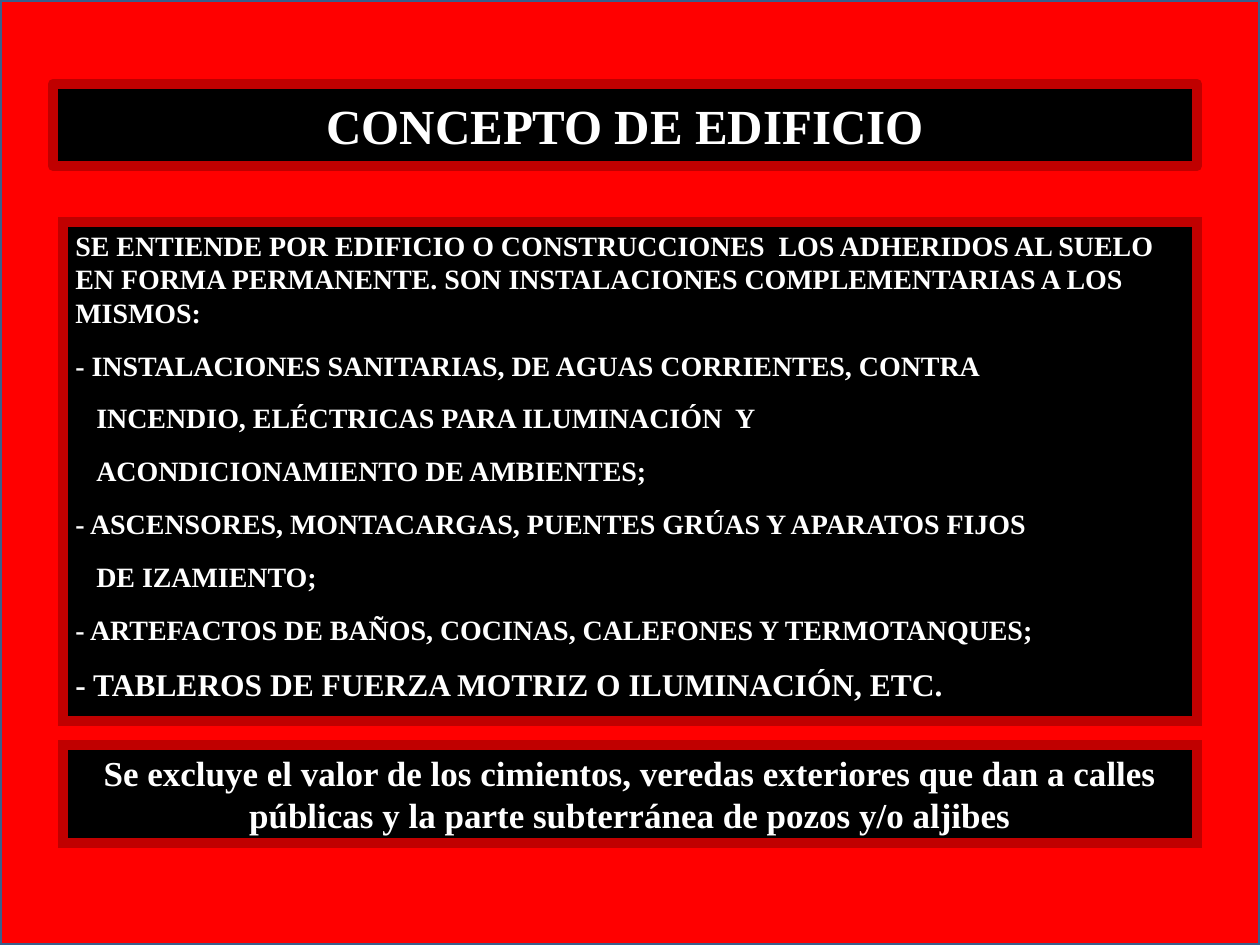
from lxml.etree import SubElement
from pptx import Presentation
from pptx.dml.color import RGBColor
from pptx.enum.shapes import MSO_SHAPE
from pptx.enum.text import MSO_ANCHOR, MSO_AUTO_SIZE, PP_ALIGN
from pptx.oxml.ns import qn
from pptx.util import Emu, Pt

SCALE = 914400 / 126
INDENT = 21


def px(n):
    return Emu(round(n * SCALE))


def color(code):
    return RGBColor.from_string(code)


class Deck:
    font = "Times New Roman"
    ink = "FFFFFF"
    panel = "000000"
    edge = "C00000"
    border = 6

    def __init__(self, wide, high):
        self.prs = Presentation()
        self.prs.slide_width, self.prs.slide_height = px(wide), px(high)
        self.slide = self.prs.slides.add_slide(self.prs.slide_layouts[5])

    def paint(self, shape, fill, line, width):
        shape.fill.solid()
        shape.fill.fore_color.rgb = color(fill)
        shape.line.color.rgb = color(line)
        shape.line.width = Pt(width)

    def rect(self, box, fill, line, width):
        shape = self.slide.shapes.add_shape(MSO_SHAPE.RECTANGLE, *map(px, box))
        shape.shadow.inherit = False
        self.paint(shape, fill, line, width)
        return shape

    def label(self, shape, items, align, anchor):
        frame = shape.text_frame
        frame.word_wrap = True
        frame.auto_size = MSO_AUTO_SIZE.NONE
        frame.vertical_anchor = anchor
        for i, (text, size, inset) in enumerate(items):
            para = frame.add_paragraph() if i else frame.paragraphs[0]
            para.alignment = align
            para.space_before = Pt(11 if i else 0)
            if inset:
                para._p.get_or_add_pPr().set("marL", str(px(inset)))
            run = para.add_run()
            run.text = text
            run.font.name = self.font
            run.font.size = Pt(size)
            run.font.bold = True
            run.font.color.rgb = color(self.ink)

    def back(self, box, fill, line, width):
        shape = self.rect(box, fill, line, width)
        self.slide.shapes.title.element.addprevious(shape.element)

    def title(self, box, text, size):
        shape = self.slide.shapes.title
        shape.left, shape.top, shape.width, shape.height = map(px, box)
        self.paint(shape, self.panel, self.edge, self.border)
        line = shape.line._get_or_add_ln()
        SubElement(line, qn("a:round"))
        self.label(shape, [(text, size, 0)], PP_ALIGN.CENTER, MSO_ANCHOR.MIDDLE)

    def block(self, box, items, align, anchor):
        shape = self.rect(box, self.panel, self.edge, self.border)
        line = shape.line._get_or_add_ln()
        SubElement(line, qn("a:miter"), lim="800000")
        self.label(shape, items, align, anchor)


def main():
    deck = Deck(1260, 945)

    # Red backdrop and heading
    deck.back((0, 0, 1260, 945), "FF0000", "3A5F8C", 2)
    deck.title((53, 84, 1144, 82), "CONCEPTO DE EDIFICIO", 28)

    # Definition and list of installations: text, size, indent
    items = [
        ("SE ENTIENDE POR EDIFICIO O CONSTRUCCIONES  LOS ADHERIDOS AL SUELO "
         "EN FORMA PERMANENTE. SON INSTALACIONES COMPLEMENTARIAS A LOS MISMOS:", 16, 0),
        ("- INSTALACIONES SANITARIAS, DE AGUAS CORRIENTES, CONTRA", 16, 0),
        ("INCENDIO, ELÉCTRICAS PARA ILUMINACIÓN  Y", 16, INDENT),
        ("ACONDICIONAMIENTO DE AMBIENTES;", 16, INDENT),
        ("- ASCENSORES, MONTACARGAS, PUENTES GRÚAS Y APARATOS FIJOS", 16, 0),
        ("DE IZAMIENTO;", 16, INDENT),
        ("- ARTEFACTOS DE BAÑOS, COCINAS, CALEFONES Y TERMOTANQUES;", 16, 0),
        ("- TABLEROS DE FUERZA MOTRIZ O ILUMINACIÓN, ETC.", 18, 0),
    ]
    deck.block((63, 222, 1134, 499), items, PP_ALIGN.LEFT, MSO_ANCHOR.TOP)

    # Exclusions
    note = ("Se excluye el valor de los cimientos, veredas exteriores que dan a "
            "calles públicas y la parte subterránea de pozos y/o aljibes")
    deck.block((63, 745, 1134, 98), [(note, 20, 0)], PP_ALIGN.CENTER, MSO_ANCHOR.MIDDLE)

    deck.prs.save("out.pptx")


if __name__ == "__main__":
    main()
